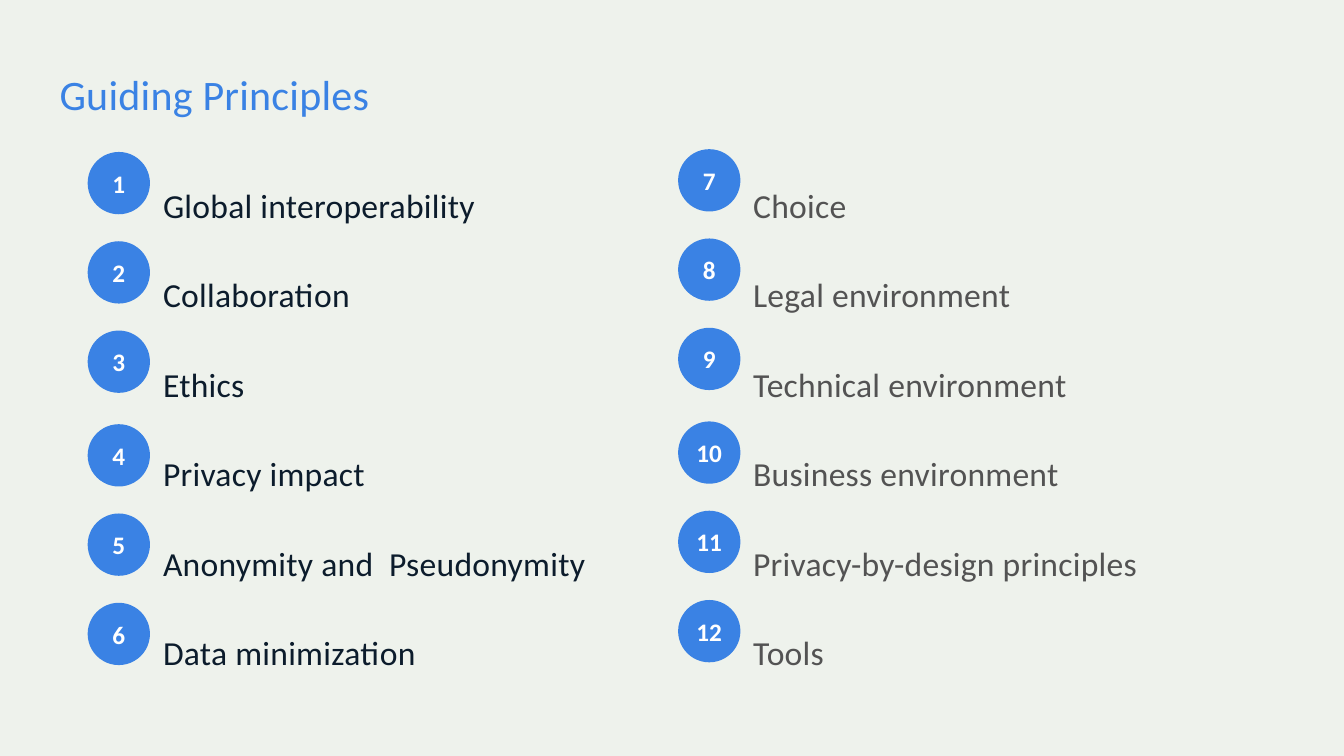
from pptx import Presentation
from pptx.dml.color import RGBColor
from pptx.enum.shapes import MSO_SHAPE
from pptx.enum.text import MSO_ANCHOR, PP_ALIGN
from pptx.util import Cm, Pt

BLUE, NAVY, GREY = "3A82E4", "0C1C2C", "535353"
PAPER, WHITE = "EEF2EC", "FFFFFF"
LEFT_PRINCIPLES = ["Global interoperability", "Collaboration", "Ethics",
                   "Privacy impact", "Anonymity and  Pseudonymity", "Data minimization"]
RIGHT_PRINCIPLES = ["Choice", "Legal environment", "Technical environment",
                    "Business environment", "Privacy-by-design principles", "Tools"]
BADGE_SIZE, BADGE_PITCH, MIDDLE_GAP = 1.57, 2.25, 0.11


def colour(value):
    return RGBColor.from_string(value)


def format_frame(frame, **values):
    """Remove the insets and apply further frame settings."""
    settings = dict(margin_left=0, margin_right=0, margin_top=0, margin_bottom=0,
                    word_wrap=True, **values)
    for name, value in settings.items():
        setattr(frame, name, value)


def write(para, text, size, shade, bold=False, spacing=0):
    """Add one span; spacing is in hundredths of a point."""
    span = para.add_run()
    span.text = text
    for name, value in dict(name="Calibri", size=Pt(size), bold=bold).items():
        setattr(span.font, name, value)
    span.font.color.rgb = colour(shade)
    if spacing:
        span.font._element.set("spc", str(spacing))


def place_title(page, left, top, width, height):
    title = page.shapes.title
    box = dict(left=Cm(left), top=Cm(top), width=Cm(width), height=Cm(height))
    for name, value in box.items():
        setattr(title, name, value)
    format_frame(title.text_frame, vertical_anchor=MSO_ANCHOR.MIDDLE)
    para = title.text_frame.paragraphs[0]
    para.alignment = PP_ALIGN.LEFT
    para.line_spacing = 1.06
    write(para, "Guiding Principles", 30, BLUE, spacing=20)


def add_principles(page, left, top, width, height):
    """Set all principles in one text box with two columns."""
    frame = page.shapes.add_textbox(Cm(left), Cm(top), Cm(width), Cm(height)).text_frame
    format_frame(frame, vertical_anchor=MSO_ANCHOR.TOP)
    frame._txBody.bodyPr.set("numCol", "2")
    entries = [(text, NAVY) for text in LEFT_PRINCIPLES]
    entries += [(text, GREY) for text in RIGHT_PRINCIPLES]
    for index, (text, shade) in enumerate(entries):
        para = frame.add_paragraph() if index else frame.paragraphs[0]
        para.line_spacing = Pt(52)
        para.space_after = Pt(12)
        write(para, text, 24, shade, spacing=20)


def add_badges(page, left, top, first_number, count):
    """Stack numbered circles, with a slightly wider gap at mid-height."""
    for row in range(count):
        offset = row * BADGE_PITCH + (MIDDLE_GAP if row >= count // 2 else 0)
        badge = page.shapes.add_shape(MSO_SHAPE.OVAL, Cm(left), Cm(top + offset),
                                      Cm(BADGE_SIZE), Cm(BADGE_SIZE))
        badge.shadow.inherit = False
        badge.fill.solid()
        badge.fill.fore_color.rgb = colour(BLUE)
        badge.line.fill.background()
        format_frame(badge.text_frame, vertical_anchor=MSO_ANCHOR.MIDDLE)
        para = badge.text_frame.paragraphs[0]
        para.alignment = PP_ALIGN.CENTER
        write(para, str(first_number + row), 18, WHITE, bold=True)


def build_principles_slide(deck):
    page = deck.slides.add_slide(deck.slide_layouts[5])
    page.background.fill.solid()
    page.background.fill.fore_color.rgb = colour(PAPER)
    place_title(page, 1.5, 1.57, 30.89, 1.5)
    add_principles(page, 4.11, 3.83, 29.74, 13.6)
    add_badges(page, 2.21, 3.83, 1, len(LEFT_PRINCIPLES))
    add_badges(page, 17.09, 3.76, len(LEFT_PRINCIPLES) + 1, len(RIGHT_PRINCIPLES))


def main():
    deck = Presentation()
    deck.slide_width, deck.slide_height = Cm(33.87), Cm(19.05)
    build_principles_slide(deck)
    deck.save("out.pptx")


if __name__ == "__main__":
    main()
